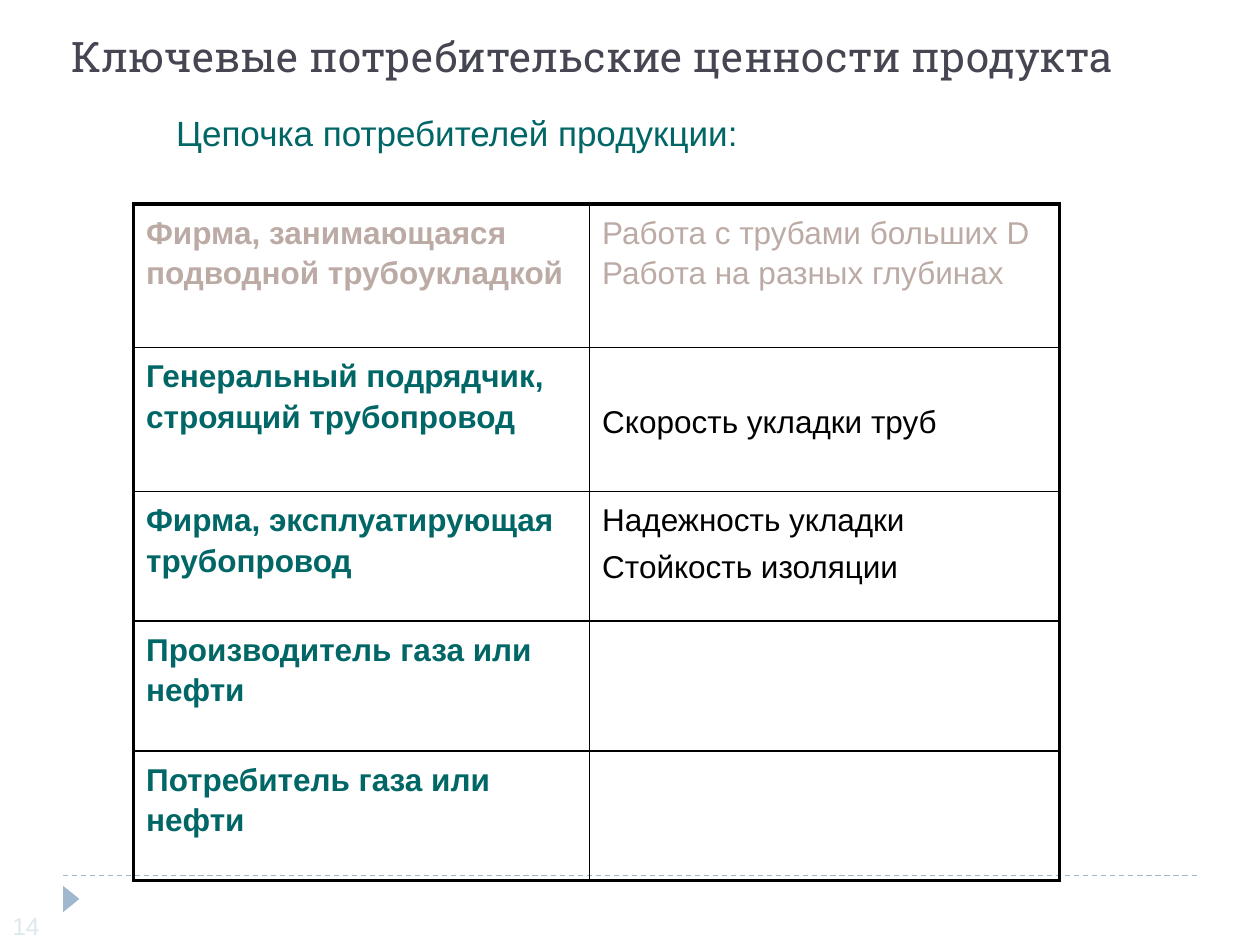
from lxml.etree import SubElement
from pptx import Presentation
from pptx.dml.color import RGBColor
from pptx.enum.dml import MSO_LINE
from pptx.enum.shapes import MSO_CONNECTOR, MSO_SHAPE
from pptx.enum.text import MSO_ANCHOR
from pptx.oxml.ns import qn
from pptx.util import Inches, Pt

TEAL, FADED, BLACK, ACCENT = "006666", "BCABA5", "000000", "9FB8CD"
COLUMN_WIDTHS = [3.62, 3.73]
ROW_HEIGHTS = [1.14, 1.14, 1.03, 1.03, 1.03]
CONSUMERS = [
    ("Фирма, занимающаяся подводной трубоукладкой",
     "Работа с трубами больших D Работа на разных глубинах"),
    ("Генеральный подрядчик, строящий трубопровод", "Скорость укладки труб"),
    ("Фирма, эксплуатирующая трубопровод", "Надежность укладки\nСтойкость изоляции"),
    ("Производитель газа или нефти", ""),
    ("Потребитель газа или нефти", ""),
]


def color(value):
    """Turn a hex string into a colour."""
    return RGBColor.from_string(value)


def style_font(font, size, value, name="Arial", bold=False):
    """Set the size, colour, typeface and weight of a font."""
    font.size = Pt(size)
    font.name = name
    font.bold = bold
    font.color.rgb = color(value)


def add_label(slide, box, text, size, value, name="Arial"):
    """Add one line of text, centred vertically in the box."""
    frame = slide.shapes.add_textbox(*map(Inches, box)).text_frame
    frame.word_wrap = True
    frame.vertical_anchor = MSO_ANCHOR.MIDDLE
    frame.text = text
    style_font(frame.paragraphs[0].runs[0].font, size, value, name)


def add_footer(slide, box):
    """Add the dashed rule, the marker and the slide number."""
    left, top, width, height = box
    rule = slide.shapes.add_connector(
        MSO_CONNECTOR.STRAIGHT, Inches(left), Inches(top), Inches(left + width), Inches(top))
    rule.line.color.rgb = color(ACCENT)
    rule.line.width = Pt(0.75)
    rule.line.dash_style = MSO_LINE.DASH
    SubElement(rule._element.spPr, qn("a:effectLst"))
    marker = slide.shapes.add_shape(
        MSO_SHAPE.ISOSCELES_TRIANGLE, Inches(left - 0.04), Inches(top + 0.12),
        Inches(0.21), Inches(0.13))
    marker.rotation = 90
    marker.shadow.inherit = False
    marker.fill.solid()
    marker.fill.fore_color.rgb = color(ACCENT)
    marker.line.fill.background()
    add_label(slide, (0, top + height - 0.35, 0.6, 0.3), "14", 14, "DDE9EC")


def set_borders(cell, widths):
    """Draw the left, right, top and bottom borders of a cell in black."""
    properties = cell._tc.get_or_add_tcPr()
    for index, (side, width) in enumerate(zip("LRTB", widths)):
        border = properties.makeelement(qn(f"a:ln{side}"), {"w": str(Pt(width))})
        fill = SubElement(border, qn("a:solidFill"))
        SubElement(fill, qn("a:srgbClr"), val=BLACK)
        properties.insert(index, border)


def fill_cell(cell, text, value, bold):
    """Write the paragraphs of a cell."""
    cell.fill.background()
    cell.text_frame.text = text
    for paragraph in cell.text_frame.paragraphs:
        paragraph.line_spacing = 1.15
        paragraph.space_before = Pt(3.6)
        style_font(paragraph.font, 18, value, bold=bold)
        for run in paragraph.runs:
            style_font(run.font, 18, value, bold=bold)


def add_consumer_table(slide, box):
    """Add the table of consumers and the values they look for."""
    last_row, last_column = len(CONSUMERS) - 1, len(COLUMN_WIDTHS) - 1
    table = slide.shapes.add_table(
        len(CONSUMERS), len(COLUMN_WIDTHS), *map(Inches, box)).table
    table.first_row = table.horz_banding = False
    for column, width in zip(table.columns, COLUMN_WIDTHS):
        column.width = Inches(width)
    for row_index, texts in enumerate(CONSUMERS):
        table.rows[row_index].height = Inches(ROW_HEIGHTS[row_index])
        for column_index, text in enumerate(texts):
            cell = table.cell(row_index, column_index)
            value = FADED if row_index == 0 else (TEAL, BLACK)[column_index]
            fill_cell(cell, text, value, column_index == 0)
            outer = (column_index == 0, column_index == last_column,
                     row_index == 0, row_index == last_row)
            set_borders(cell, [2.25 if edge else 1 for edge in outer])
    table.cell(1, 1).vertical_anchor = MSO_ANCHOR.MIDDLE


def main():
    """Build and save the slide."""
    presentation = Presentation()
    presentation.slide_width, presentation.slide_height = Inches(10), Inches(7.5)
    slide = presentation.slides.add_slide(presentation.slide_layouts[6])
    add_footer(slide, (0.5, 6.95, 9, 0.6))
    add_label(slide, (1.3, 0.84, 6.57, 0.43), "Цепочка потребителей продукции:", 20, TEAL)
    add_consumer_table(slide, (1.06, 1.62, sum(COLUMN_WIDTHS), sum(ROW_HEIGHTS)))
    add_label(slide, (0.47, 0.17, 9.03, 0.54),
              "Ключевые потребительские ценности продукта", 24, "464653", "Roboto Slab")
    presentation.save("out.pptx")


if __name__ == "__main__":
    main()
